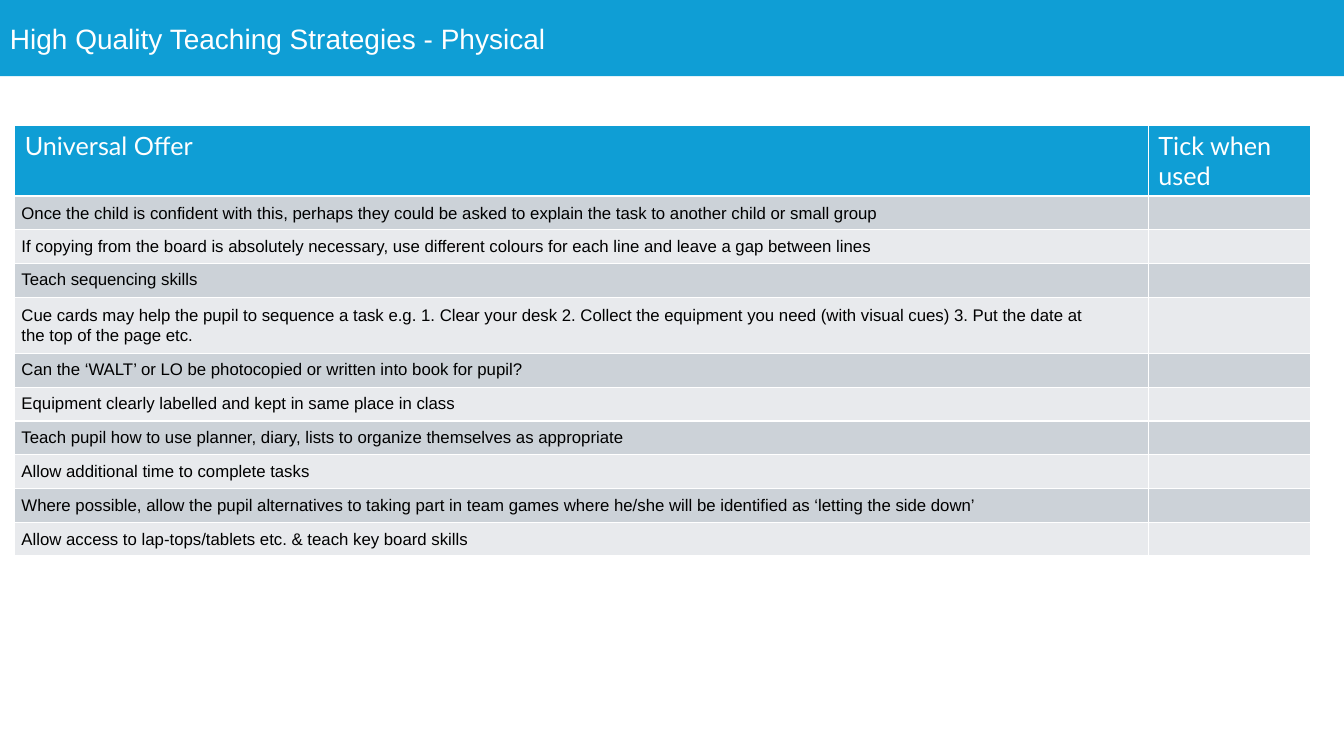
from pptx import Presentation
from pptx import util as u
from pptx.dml.color import RGBColor
from pptx.enum import shapes, text
from pptx.oxml import parse_xml
from pptx.oxml.ns import nsdecls

# Content
TITLE = "High Quality Teaching Strategies - Physical"
HEADINGS = ("Universal Offer", "Tick when used")
# (strategy, line spacing in points)
STRATEGIES = [
    ("Once the child is confident with this, perhaps they could be asked to explain the task to another child or small group", 13.8),
    ("If copying from the board is absolutely necessary, use different colours for each line and leave a gap between lines", 13.8),
    ("Teach sequencing skills", 12.8),
    ("Cue cards may help the pupil to sequence a task e.g. 1. Clear your desk 2. Collect the equipment you need (with visual cues) 3. Put the date at the top of the page etc.", 13.8),
    ("Can the ‘WALT’ or LO be photocopied or written into book for pupil?", 12.7),
    ("Equipment clearly labelled and kept in same place in class", 12.8),
    ("Teach pupil how to use planner, diary, lists to organize themselves as appropriate", 12.8),
    ("Allow additional time to complete tasks", 12.8),
    ("Where possible, allow the pupil alternatives to taking part in team games where he/she will be identified as ‘letting the side down’", 13.8),
    ("Allow access to lap-tops/tablets etc. & teach key board skills", 13.8),
]

# Sizes in centimetres
PAGE_WIDTH, PAGE_HEIGHT = 33.87, 19.05
COLUMN_WIDTHS = (28.57, 4.09)
HEADER_HEIGHT, ROW_HEIGHT, TALL_ROW_HEIGHT = 1.77, 0.85, 1.42
TEXT_INDENT, TEXT_RIGHT_MARGIN = 0.17, 1.2
LONG_TEXT = 140

BLUE, WHITE, BLACK = "0F9ED5", "FFFFFF", "000000"
BANDS = ("CCD2D8", "E8EAED")


def paint(fill, colour):
    fill.solid()
    fill.fore_color.rgb = RGBColor.from_string(colour)


def format_text(para, font, size, colour):
    for span in para.runs:
        span.font.name = font
        span.font.size = u.Pt(size)
        span.font.bold = False
        paint(span.font.fill, colour)


def style_cell(cell, colour):
    properties = cell._tc.get_or_add_tcPr()
    for side in "LRTB":
        properties.append(parse_xml(
            f'<a:ln{side} {nsdecls("a")} w="12700"><a:solidFill>'
            f'<a:srgbClr val="{WHITE}"/></a:solidFill></a:ln{side}>'))
    paint(cell.fill, colour)


deck = Presentation()
deck.slide_width, deck.slide_height = u.Cm(PAGE_WIDTH), u.Cm(PAGE_HEIGHT)
page = deck.slides.add_slide(deck.slide_layouts[6])

# Title bar
bar = page.shapes.add_shape(shapes.MSO_SHAPE.RECTANGLE, 0, 0, u.Cm(PAGE_WIDTH), u.Cm(1.92))
bar.shadow.inherit = False
bar.line.fill.background()
paint(bar.fill, BLUE)
bar.text_frame.text = TITLE
bar.text_frame.vertical_anchor = text.MSO_ANCHOR.MIDDLE
bar.text_frame.paragraphs[0].alignment = text.PP_ALIGN.LEFT
format_text(bar.text_frame.paragraphs[0], "Arial", 20, WHITE)

# Table grid
heights = [HEADER_HEIGHT] + [
    TALL_ROW_HEIGHT if len(strategy) > LONG_TEXT else ROW_HEIGHT
    for strategy, _ in STRATEGIES]
table = page.shapes.add_table(
    len(heights), len(COLUMN_WIDTHS), u.Cm(0.37), u.Cm(3.16),
    u.Cm(sum(COLUMN_WIDTHS)), u.Cm(sum(heights))).table
for column, width in zip(table.columns, COLUMN_WIDTHS):
    column.width = u.Cm(width)
for row, height in zip(table.rows, heights):
    row.height = u.Cm(height)

# Heading row
for cell, heading in zip(table.rows[0].cells, HEADINGS):
    style_cell(cell, BLUE)
    cell.text = heading
    format_text(cell.text_frame.paragraphs[0], "Lato", 18, WHITE)

# Strategy rows
for index, (strategy, spacing) in enumerate(STRATEGIES):
    cells = table.rows[index + 1].cells
    for cell in cells:
        style_cell(cell, BANDS[index % 2])
        cell.margin_left = cell.margin_right = cell.margin_top = cell.margin_bottom = 0
        cell.vertical_anchor = text.MSO_ANCHOR.MIDDLE
    offer = cells[0]
    offer.margin_left, offer.margin_right = u.Cm(TEXT_INDENT), u.Cm(TEXT_RIGHT_MARGIN)
    offer.text = strategy
    para = offer.text_frame.paragraphs[0]
    para.line_spacing = u.Pt(spacing)
    format_text(para, "Arial", 12, BLACK)

deck.save("out.pptx")
